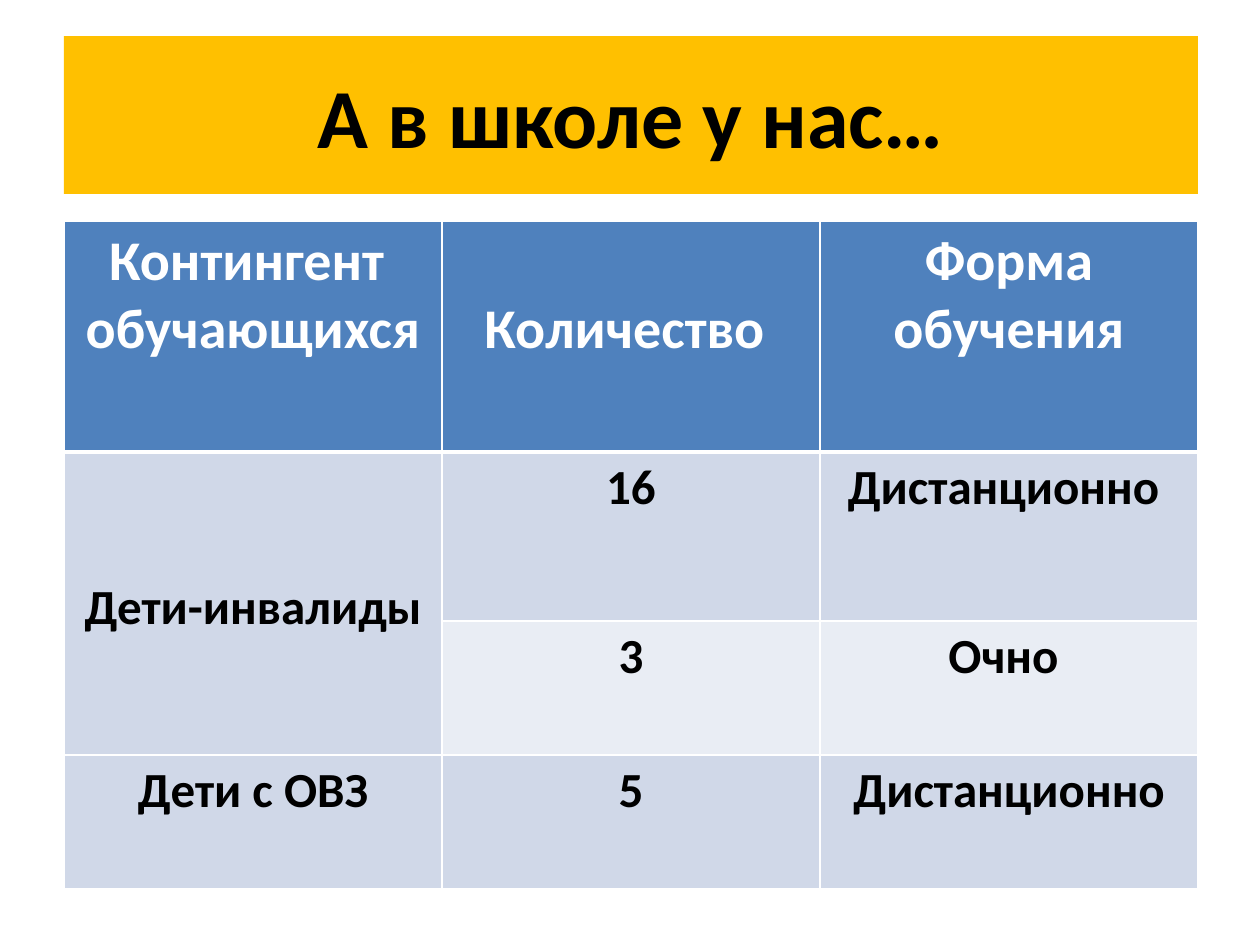
"""Build the slide on the school's pupils and their forms of study."""
from lxml.etree import SubElement
from pptx import Presentation
from pptx.dml.color import RGBColor
from pptx.enum.text import MSO_ANCHOR, PP_ALIGN
from pptx.oxml.ns import qn
from pptx.util import Pt

PX = 914400 / 126
COLORS = {
    "banner": "FFC000",
    "header": "4F81BD",
    "band": "D0D8E8",
    "light": "E9EDF4",
    "white": "FFFFFF",
    "black": "000000",
}


def px(length):
    return round(length * PX)


def format_text(frame, size, color):
    for paragraph in frame.paragraphs:
        paragraph.alignment = PP_ALIGN.CENTER
        for run in paragraph.runs:
            run.font.name = "Calibri"
            run.font.size = Pt(size)
            run.font.bold = True
            run.font.color.rgb = RGBColor.from_string(COLORS[color])


presentation = Presentation()
presentation.slide_width, presentation.slide_height = px(1260), px(945)
slide = presentation.slides.add_slide(presentation.slide_layouts[5])

heading = slide.shapes.title
heading.left, heading.top, heading.width, heading.height = px(64), px(36), px(1134), px(158)
heading.fill.solid()
heading.fill.fore_color.rgb = RGBColor.from_string(COLORS["banner"])
heading.text_frame.text = "А в школе у нас…"
heading.text_frame.vertical_anchor = MSO_ANCHOR.MIDDLE
format_text(heading.text_frame, 48, "black")

contents = [
    ["Контингент \nобучающихся", "Количество ", "Форма обучения"],
    ["Дети-инвалиды", "16", "Дистанционно "],
    ["", "3", "Очно "],
    ["Дети с ОВЗ", "5", "Дистанционно"],
]
row_heights = [231, 169, 134, 134]
row_fills = ["header", "band", "light", "band"]
top_margins = {(0, 1): 74, (1, 0): 126}

pupils = slide.shapes.add_table(
    len(contents), 3, px(64), px(221), px(1134), px(sum(row_heights))
).table
for column in pupils.columns:
    column.width = px(378)

for r, (texts, height, fill) in enumerate(zip(contents, row_heights, row_fills)):
    pupils.rows[r].height = px(height)
    for c, text in enumerate(texts):
        cell = pupils.cell(r, c)
        properties = cell._tc.get_or_add_tcPr()
        for side in ("lnL", "lnR", "lnT", "lnB"):
            thick = (r, side) in ((0, "lnB"), (1, "lnT"))
            border = SubElement(properties, qn(f"a:{side}"), w=str(Pt(3 if thick else 1)))
            SubElement(SubElement(border, qn("a:solidFill")), qn("a:srgbClr"), val=COLORS["white"])
        cell.fill.solid()
        cell.fill.fore_color.rgb = RGBColor.from_string(COLORS[fill])
        cell.margin_top = px(top_margins.get((r, c), 6))
        cell.text_frame.text = text
        format_text(cell.text_frame, 28 if r else 32, "black" if r else "white")

pupils.cell(1, 0).merge(pupils.cell(2, 0))

presentation.save("out.pptx")
